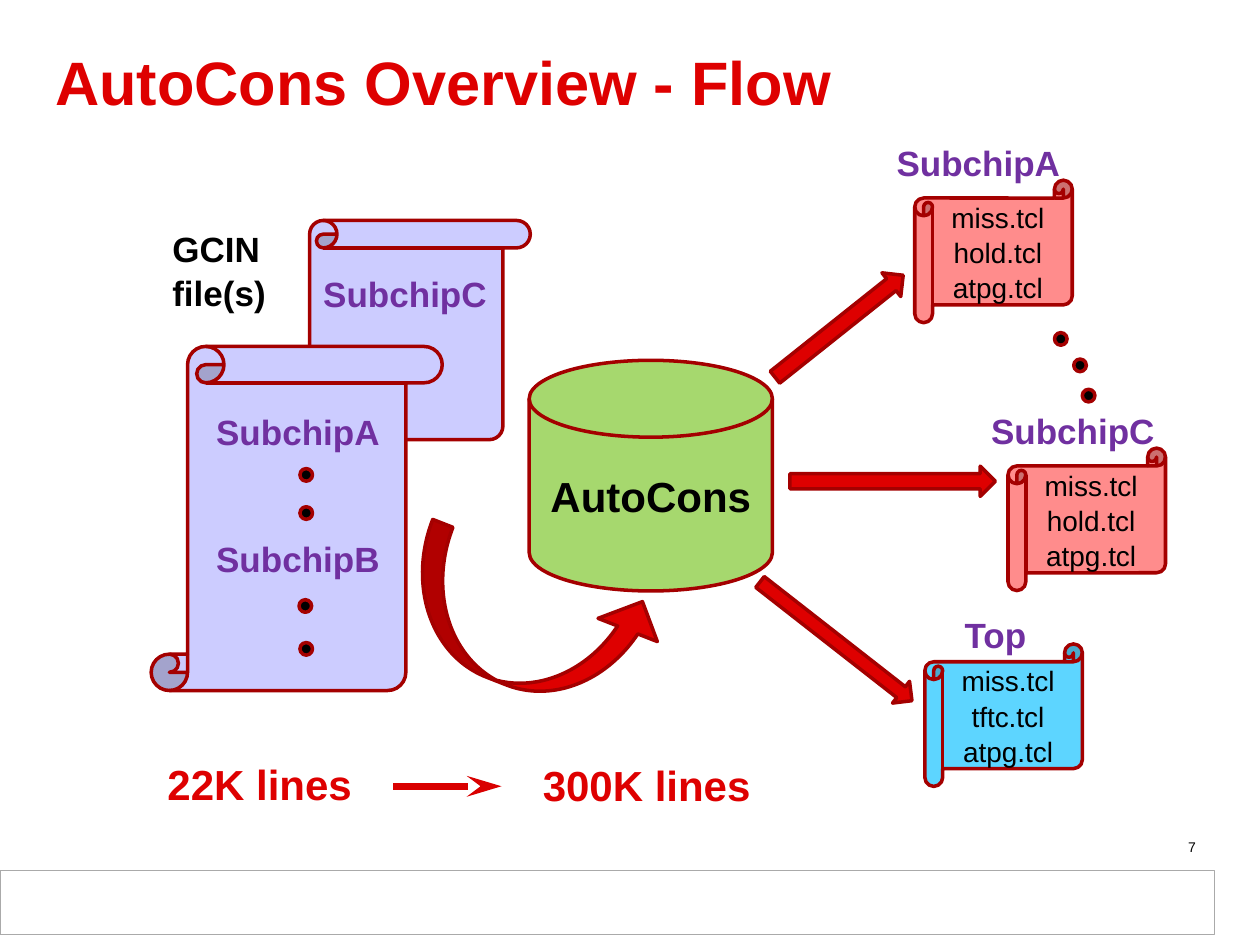
from dataclasses import dataclass

from lxml.etree import SubElement
from pptx import Presentation
from pptx.dml.color import RGBColor
from pptx.enum.shapes import MSO_CONNECTOR, MSO_SHAPE
from pptx.enum.text import MSO_ANCHOR, MSO_AUTO_SIZE, PP_ALIGN
from pptx.oxml.ns import qn
from pptx.util import Pt

FONT = "Arial"
BLACK = RGBColor(0x00, 0x00, 0x00)
WHITE = RGBColor(0xFF, 0xFF, 0xFF)
GRAY = RGBColor(0xAA, 0xAA, 0xAA)
RED = RGBColor(0xDE, 0x00, 0x00)
LINE_RED = RGBColor(0xD9, 0x00, 0x00)
DARK_RED = RGBColor(0xA4, 0x00, 0x00)
PURPLE = RGBColor(0x70, 0x30, 0xA0)
LAVENDER = RGBColor(0xCC, 0xCC, 0xFF)
GREEN = RGBColor(0xA6, 0xD8, 0x6E)
PINK = RGBColor(0xFF, 0x8C, 0x8C)
CYAN = RGBColor(0x5D, 0xD5, 0xFF)

DOT_SIZE = 7.2
SCROLL_SIZE = (90, 81.4)


@dataclass
class Box:
    left: float
    top: float
    width: float
    height: float


@dataclass
class Label:
    text: str
    box: Box
    size: float = 20
    color: RGBColor = PURPLE
    align: PP_ALIGN = PP_ALIGN.CENTER


@dataclass
class Output:
    files: str
    left: float
    top: float
    fill: RGBColor


@dataclass
class Arrow:
    box: Box
    rotation: float


LABELS = [
    Label("SubchipA", Box(115.9, 229.7, 108.7, 31.7)),
    Label("SubchipB", Box(115.9, 302.4, 108.7, 31.7)),
    Label("SubchipC", Box(177.1, 151.2, 108.7, 31.7)),
    Label("SubchipA", Box(504.7, 76.3, 108.7, 31.7)),
    Label("SubchipC", Box(558.7, 229, 108.7, 31.7)),
    Label("Top", Box(543.6, 345.6, 50.4, 31.7)),
    Label("GCIN\nfile(s)", Box(91.4, 125.3, 68.4, 55.4), 20, BLACK, PP_ALIGN.LEFT),
    Label("22K lines", Box(88.6, 428.4, 121, 36), 24, RED, PP_ALIGN.LEFT),
    Label("300K lines", Box(303.1, 429.1, 134.6, 36), 24, RED, PP_ALIGN.LEFT),
]
OUTPUTS = [
    Output("miss.tcl\nhold.tcl\natpg.tcl", 522.7, 103, PINK),
    Output("miss.tcl\nhold.tcl\natpg.tcl", 576, 256.1, PINK),
    Output("miss.tcl\ntftc.tcl\natpg.tcl", 528.5, 368, CYAN),
]
ARROWS = [
    Arrow(Box(432.7, 177.8, 93.6, 17.3), 321.5),
    Arrow(Box(422.6, 358.6, 110.2, 15.8), 38),
    Arrow(Box(451.4, 266.4, 117.4, 17.3), 0),
]
DOTS = [
    (171.4, 267.8), (171.4, 289.6), (170.9, 342.7), (171.4, 367.2),
    (602.6, 190.1), (613.6, 205.2), (618.5, 222.5),
]


def write(sp, text: str, size: float, color: RGBColor, bold: bool,
          align: PP_ALIGN, spacing: float = 1.05) -> None:
    tf = sp.text_frame
    tf.text = text
    for p in tf.paragraphs:
        p.alignment = align
        p.line_spacing = spacing
        for r in p.runs:
            r.font.name = FONT
            r.font.size = Pt(size)
            r.font.bold = bold
            r.font.color.rgb = color


def add_shape(s, kind: MSO_SHAPE, box: Box, fill: RGBColor,
              line: RGBColor = DARK_RED, weight: float = 2):
    sp = s.shapes.add_shape(kind, Pt(box.left), Pt(box.top), Pt(box.width), Pt(box.height))
    sp.shadow.inherit = False
    sp.fill.solid()
    sp.fill.fore_color.rgb = fill
    sp.line.color.rgb = line
    sp.line.width = Pt(weight)
    sp.text_frame.vertical_anchor = MSO_ANCHOR.MIDDLE
    return sp


def add_textbox(s, box: Box):
    return s.shapes.add_textbox(Pt(box.left), Pt(box.top), Pt(box.width), Pt(box.height))


def add_label(s, label: Label) -> None:
    sp = add_textbox(s, label.box)
    sp.text_frame.word_wrap = False
    sp.text_frame.auto_size = MSO_AUTO_SIZE.SHAPE_TO_FIT_TEXT
    write(sp, label.text, label.size, label.color, True, label.align)


def add_output(s, output: Output) -> None:
    sp = add_shape(s, MSO_SHAPE.HORIZONTAL_SCROLL,
                   Box(output.left, output.top, *SCROLL_SIZE), output.fill)
    write(sp, output.files, 16, BLACK, False, PP_ALIGN.CENTER)


def add_line_arrow(s, x1: float, x2: float, y: float) -> None:
    line = s.shapes.add_connector(MSO_CONNECTOR.STRAIGHT, Pt(x1), Pt(y), Pt(x2), Pt(y))
    line.line.color.rgb = LINE_RED
    line.line.width = Pt(4)
    SubElement(line.line._get_or_add_ln(), qn("a:tailEnd"), type="stealth", w="med", len="lg")
    SubElement(line._element.spPr, qn("a:effectLst"))


def main() -> None:
    prs = Presentation()
    prs.slide_width, prs.slide_height = Pt(720), Pt(540)
    s = prs.slides.add_slide(prs.slide_layouts[6])

    # Footer bar, title and page number
    add_shape(s, MSO_SHAPE.RECTANGLE, Box(0, 497.5, 694, 36.7), WHITE, GRAY, 0.75)
    title = add_textbox(s, Box(24.5, 23, 666, 53.3))
    title.text_frame.word_wrap = True
    title.text_frame.vertical_anchor = MSO_ANCHOR.MIDDLE
    write(title, "AutoCons Overview - Flow", 35, RED, True, PP_ALIGN.LEFT, 0.85)
    number = add_textbox(s, Box(522.7, 475.2, 167.8, 16.6))
    number.text_frame.word_wrap = True
    write(number, "7", 8, BLACK, False, PP_ALIGN.RIGHT)

    # Input scrolls, back one first
    for box in (Box(161.3, 126, 141.8, 125.3), Box(86.4, 198, 166.3, 196.6)):
        add_shape(s, MSO_SHAPE.VERTICAL_SCROLL, box, LAVENDER)

    # Tool and its output files
    tool = add_shape(s, MSO_SHAPE.FLOWCHART_MAGNETIC_DISK, Box(302.4, 205.9, 139, 131.8), GREEN)
    write(tool, "AutoCons", 24, BLACK, True, PP_ALIGN.CENTER)
    for output in OUTPUTS:
        add_output(s, output)

    # Arrows into and out of the tool
    curve = add_shape(s, MSO_SHAPE.CURVED_UP_ARROW, Box(229, 321.1, 146.9, 72.7), RED)
    curve.adjustments[0] = 0.17
    curve.rotation = 21.4
    for arrow in ARROWS:
        sp = add_shape(s, MSO_SHAPE.RIGHT_ARROW, arrow.box, RED)
        sp.rotation = arrow.rotation

    # Ellipsis dots
    for x, y in DOTS:
        add_shape(s, MSO_SHAPE.FLOWCHART_CONNECTOR, Box(x, y, DOT_SIZE, DOT_SIZE), BLACK)

    # Labels and line-count arrow
    for label in LABELS:
        add_label(s, label)
    add_line_arrow(s, 224.6, 286.6, 449.3)

    prs.save("out.pptx")


if __name__ == "__main__":
    main()
